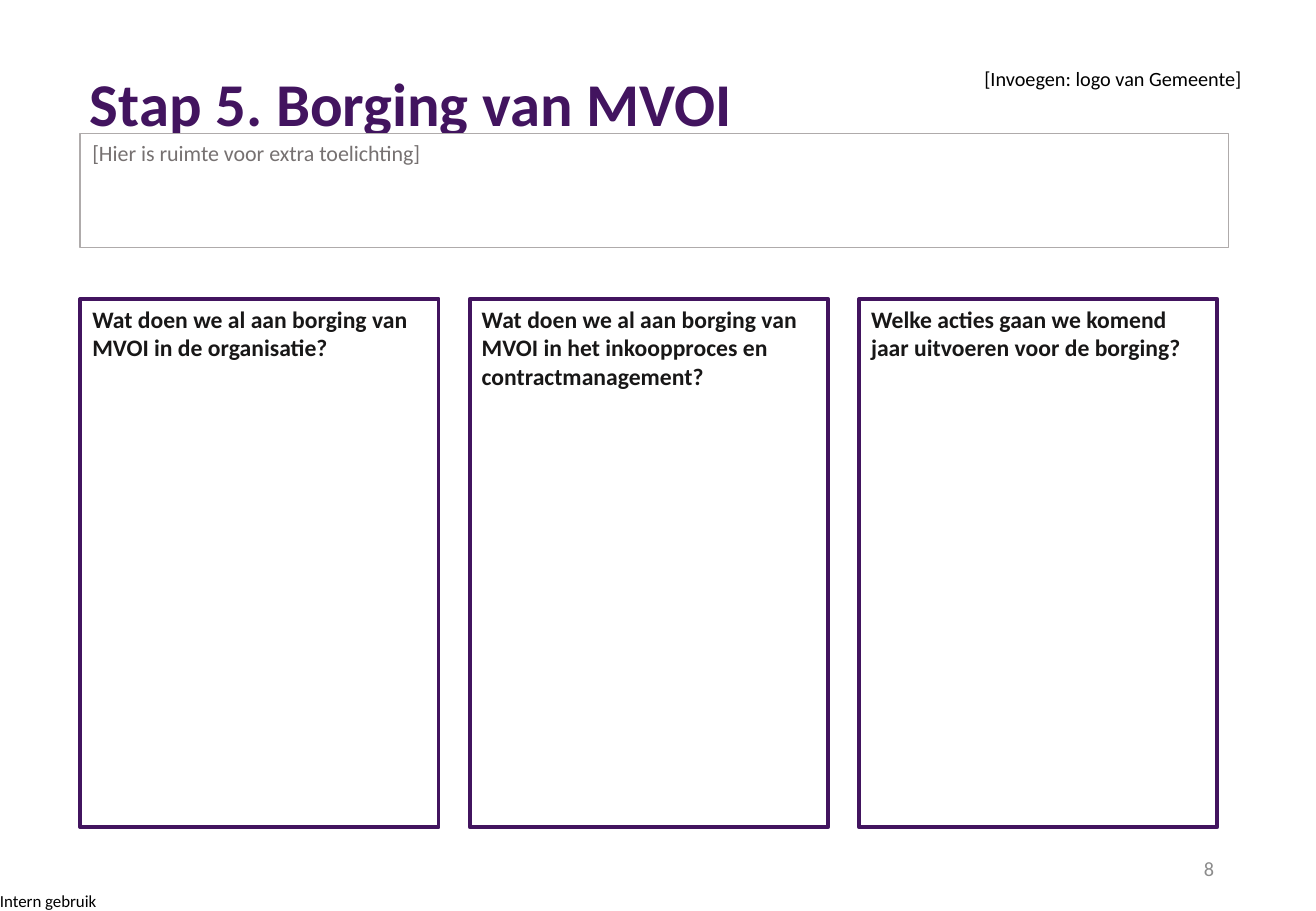
from pptx import Presentation
from pptx.dml.color import RGBColor
from pptx.enum.shapes import MSO_SHAPE
from pptx.enum.text import MSO_ANCHOR, MSO_AUTO_SIZE, PP_ALIGN
from pptx.util import Cm, Pt

PURPLE = RGBColor(0x42, 0x14, 0x5F)
INK = RGBColor(0x18, 0x17, 0x17)
BLACK = RGBColor(0, 0, 0)
WHITE = RGBColor(0xFF, 0xFF, 0xFF)
BORDER_GREY = RGBColor(0xAF, 0xAB, 0xAB)
NOTE_GREY = RGBColor(0x76, 0x71, 0x71)
NUMBER_GREY = RGBColor(0x8C, 0x8C, 0x8C)

LEFT = 1.68
CARD_WIDTH = 7.49
CARD_PITCH = 8.14
QUESTIONS = [
    "Wat doen we al aan borging van MVOI in de organisatie?",
    "Wat doen we al aan borging van MVOI in het inkoopproces en contractmanagement?",
    "Welke acties gaan we komend jaar uitvoeren voor de borging?",
]


class WorksheetPage:
    """Holds the style and the current slide of the worksheet."""

    font_name = "Calibri"

    def __init__(self, deck):
        self.page = deck.slides.add_slide(deck.slide_layouts[5])

    def set_text(self, shape, text, size, color, bold=False,
                 align=PP_ALIGN.LEFT, anchor=MSO_ANCHOR.TOP):
        frame = shape.text_frame
        frame.word_wrap = True
        frame.auto_size = MSO_AUTO_SIZE.NONE
        frame.vertical_anchor = anchor
        para = frame.paragraphs[0]
        para.text = text
        para.alignment = align
        para.font.name = self.font_name
        para.font.size = Pt(size)
        para.font.bold = bold
        para.font.color.rgb = color
        return frame

    def title(self, text, left, top, width, height):
        title = self.page.shapes.title
        title.left, title.top = Cm(left), Cm(top)
        title.width, title.height = Cm(width), Cm(height)
        frame = self.set_text(title, text, 36, PURPLE, bold=True,
                              anchor=MSO_ANCHOR.BOTTOM)
        frame.margin_left = frame.margin_right = Cm(0.2)
        frame.margin_top = frame.margin_bottom = Cm(0.1)
        frame.paragraphs[0].line_spacing = 0.9

    def box(self, text, left, top, width, height, size, color,
            fill=None, line=None, line_width=1, **style):
        box = self.page.shapes.add_shape(
            MSO_SHAPE.RECTANGLE, Cm(left), Cm(top), Cm(width), Cm(height))
        box.shadow.inherit = False
        if fill is None:
            box.fill.background()
        else:
            box.fill.solid()
            box.fill.fore_color.rgb = fill
        if line is None:
            box.line.fill.background()
        else:
            box.line.color.rgb = line
            box.line.width = Pt(line_width)
        self.set_text(box, text, size, color, **style)

    def label(self, text, left, top, width, height, size, color, **style):
        label = self.page.shapes.add_textbox(Cm(left), Cm(top), Cm(width), Cm(height))
        return self.set_text(label, text, size, color, **style)


def main():
    deck = Presentation()
    deck.slide_width, deck.slide_height = Cm(27.51), Cm(19.05)
    sheet = WorksheetPage(deck)

    sheet.title("Stap 5. Borging van MVOI", LEFT, 0.48, 25.63, 2.54)
    for column, question in enumerate(QUESTIONS):
        sheet.box(question, LEFT + column * CARD_PITCH, 6.25, CARD_WIDTH, 11.05,
                  14, INK, line=PURPLE, line_width=2.25, bold=True)
    sheet.box("[Invoegen: logo van Gemeente]", 20.17, 0.74, 6.2, 1.8, 12, BLACK,
              fill=WHITE, align=PP_ALIGN.CENTER, anchor=MSO_ANCHOR.MIDDLE)
    sheet.box("[Hier is ruimte voor extra toelichting]", LEFT, 2.79, 24, 2.39, 13,
              NOTE_GREY, fill=WHITE, line=BORDER_GREY)
    sheet.label("8", 19.43, 17.65, 6.2, 1.02, 12, NUMBER_GREY,
                align=PP_ALIGN.RIGHT, anchor=MSO_ANCHOR.MIDDLE)

    footer = sheet.label("Intern gebruik", 0, 18.62, 2.11, 0.43, 10, BLACK)
    footer.word_wrap = False
    footer.margin_left = footer.margin_right = 0
    footer.margin_top = footer.margin_bottom = 0

    deck.save("out.pptx")


if __name__ == "__main__":
    main()
